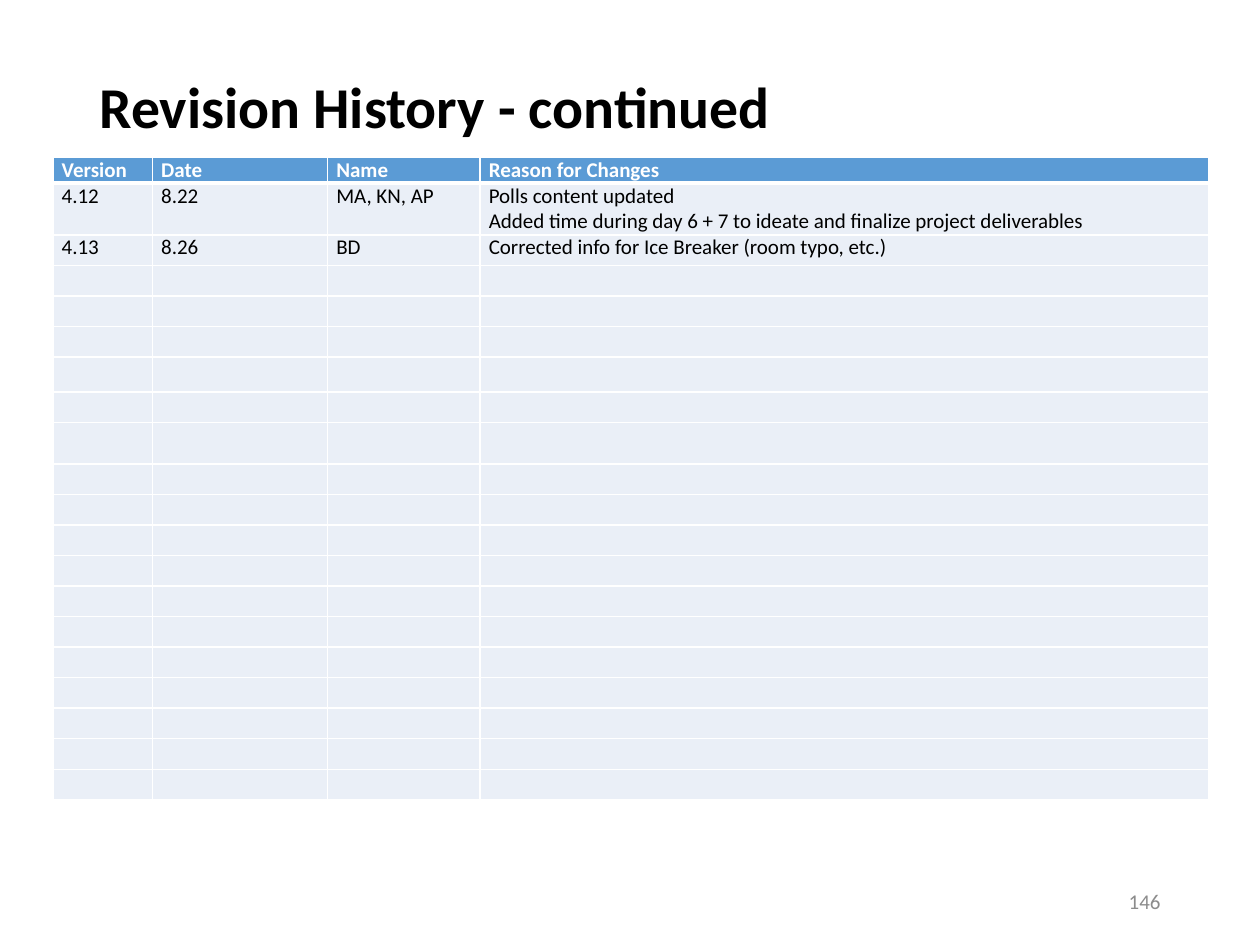
import dataclasses

import pptx
import pptx.dml.color
import pptx.enum.text
import pptx.oxml.ns
import pptx.util
from lxml import etree

Inches = pptx.util.Inches
Pt = pptx.util.Pt


@dataclasses.dataclass(frozen=True)
class Theme:
    """Colours, font and type sizes of the slide."""
    font: str = "Calibri"
    ink: str = "000000"
    white: str = "FFFFFF"
    header: str = "5B9BD5"
    row: str = "EAEFF7"
    muted: str = "8C8C8C"
    title_size: int = 33
    text_size: int = 12


THEME = Theme()
COLUMN_WIDTHS = [0.79, 1.39, 1.21, 5.78]
ROW_COUNT = 20
TABLE_HEIGHT = 5.1
SPECIAL_HEIGHTS = {0: 0.2, 1: 0.41, 6: 0.28, 8: 0.33}
REVISIONS = [
    ["Version", "Date", "Name", "Reason for Changes"],
    ["4.12", "8.22", "MA, KN, AP",
     "Polls content updated\n"
     "Added time during day 6 + 7 to ideate and finalize project deliverables"],
    ["4.13", "8.26", "BD", "Corrected info for Ice Breaker (room typo, etc.)"],
]


def rgb(colour):
    """Turn a hex string into a colour."""
    return pptx.dml.color.RGBColor.from_string(colour)


def add_run(paragraph, text, size, colour, bold=False):
    """Add one formatted run to a paragraph."""
    run = paragraph.add_run()
    run.text = text
    run.font.name = THEME.font
    run.font.size = Pt(size)
    run.font.bold = bold
    run.font.color.rgb = rgb(colour)


def add_title(slide, text):
    """Place and fill the title placeholder."""
    title = slide.shapes.title
    title.left, title.top = Inches(0.69), Inches(0.4)
    title.width, title.height = Inches(8.62), Inches(1.45)
    frame = title.text_frame
    frame.auto_size = pptx.enum.text.MSO_AUTO_SIZE.NONE
    frame.vertical_anchor = pptx.enum.text.MSO_ANCHOR.TOP
    frame.margin_top = Inches(0.22)
    paragraph = frame.paragraphs[0]
    paragraph.alignment = pptx.enum.text.PP_ALIGN.LEFT
    paragraph.line_spacing = 0.9
    add_run(paragraph, text, THEME.title_size, THEME.ink, bold=True)


def set_borders(cell, bottom_width):
    """Draw white borders around a cell."""
    properties = cell._tc.get_or_add_tcPr()
    for side, width in (("L", 1), ("R", 1), ("T", 1), ("B", bottom_width)):
        line = etree.SubElement(properties, pptx.oxml.ns.qn(f"a:ln{side}"), w=str(Pt(width)))
        fill = etree.SubElement(line, pptx.oxml.ns.qn("a:solidFill"))
        etree.SubElement(fill, pptx.oxml.ns.qn("a:srgbClr"), val=THEME.white)


def fill_cell(cell, text, is_header):
    """Format a cell and write its lines."""
    set_borders(cell, 3 if is_header else 1)
    cell.fill.solid()
    cell.fill.fore_color.rgb = rgb(THEME.header if is_header else THEME.row)
    cell.margin_left = cell.margin_right = Inches(0.07)
    cell.margin_top = cell.margin_bottom = 0
    frame = cell.text_frame
    if not text:
        etree.SubElement(frame.paragraphs[0]._p, pptx.oxml.ns.qn("a:endParaRPr"),
                         sz=str(THEME.text_size * 100))
        return
    for index, line in enumerate(text.split("\n")):
        paragraph = frame.add_paragraph() if index else frame.paragraphs[0]
        add_run(paragraph, line, THEME.text_size,
                THEME.white if is_header else THEME.ink, bold=is_header)


def add_revision_table(slide):
    """Add the revision table with its empty rows."""
    table = slide.shapes.add_table(
        ROW_COUNT, len(COLUMN_WIDTHS), Inches(0.42), Inches(1.25),
        Inches(sum(COLUMN_WIDTHS)), Inches(TABLE_HEIGHT)).table
    table.horz_banding = False
    for column, width in zip(table.columns, COLUMN_WIDTHS):
        column.width = Inches(width)
    regular = (TABLE_HEIGHT - sum(SPECIAL_HEIGHTS.values())) / (ROW_COUNT - len(SPECIAL_HEIGHTS))
    empty = [""] * len(COLUMN_WIDTHS)
    for index, row in enumerate(table.rows):
        row.height = Inches(SPECIAL_HEIGHTS.get(index, regular))
        texts = REVISIONS[index] if index < len(REVISIONS) else empty
        for cell, text in zip(row.cells, texts):
            fill_cell(cell, text, is_header=index == 0)


def add_page_number(slide, number):
    """Add the page number at the lower right."""
    box = slide.shapes.add_textbox(Inches(7.06), Inches(6.95), Inches(2.25), Inches(0.4))
    frame = box.text_frame
    frame.word_wrap = True
    frame.vertical_anchor = pptx.enum.text.MSO_ANCHOR.MIDDLE
    paragraph = frame.paragraphs[0]
    paragraph.alignment = pptx.enum.text.PP_ALIGN.RIGHT
    add_run(paragraph, number, THEME.text_size, THEME.muted)


def main():
    """Build and save the slide."""
    deck = pptx.Presentation()
    deck.slide_width, deck.slide_height = Inches(10), Inches(7.5)
    slide = deck.slides.add_slide(deck.slide_layouts.get_by_name("Title Only"))
    add_title(slide, "Revision History - continued")
    add_revision_table(slide)
    add_page_number(slide, "146")
    deck.save("out.pptx")


if __name__ == "__main__":
    main()
